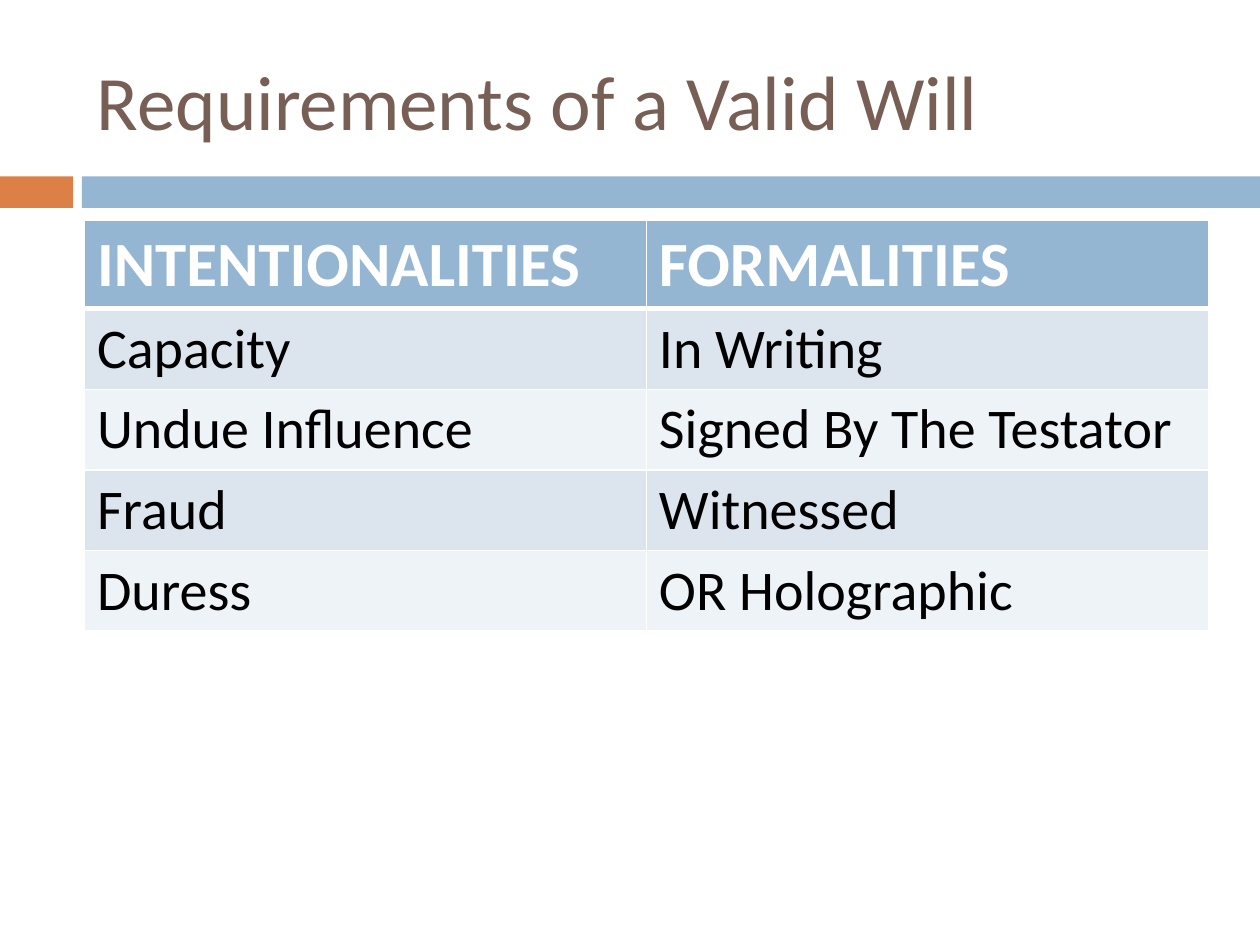
from dataclasses import dataclass

from lxml import etree
from pptx import Presentation
from pptx.dml.color import RGBColor
from pptx.enum.shapes import MSO_SHAPE
from pptx.enum.text import MSO_ANCHOR
from pptx.oxml.ns import qn
from pptx.util import Inches, Pt

RECTANGLE = MSO_SHAPE.RECTANGLE
MIDDLE = MSO_ANCHOR.MIDDLE
FONT = "Calibri"
COLORS = {
    "title": "775F55",
    "accent": "DD8047",
    "header": "94B6D2",
    "odd_row": "DCE5EE",
    "even_row": "EEF3F7",
    "white": "FFFFFF",
    "black": "000000",
}
REQUIREMENTS = [
    ("INTENTIONALITIES", "FORMALITIES"),
    ("Capacity", "In Writing"),
    ("Undue Influence", "Signed By The Testator"),
    ("Fraud", "Witnessed"),
    ("Duress", "OR Holographic"),
]


@dataclass
class Bar:
    left: float
    width: float
    color: str


@dataclass
class RowStyle:
    fill: str
    text: str
    size: int
    bold: bool
    top: int
    bottom: int


HEADER = RowStyle("header", "white", 36, True, 1, 3)
FIRST = RowStyle("odd_row", "black", 32, False, 3, 1)
ODD = RowStyle("odd_row", "black", 32, False, 1, 1)
EVEN = RowStyle("even_row", "black", 32, False, 1, 1)
ROW_STYLES = [HEADER, FIRST, EVEN, ODD, EVEN]
BARS = [Bar(0, 0.58, "accent"), Bar(0.65, 9.35, "header")]


def rgb(name: str) -> RGBColor:
    return RGBColor.from_string(COLORS[name])


def format_text(frame, size: int, color: str, bold: bool = False) -> None:
    for span in frame.paragraphs[0].runs:
        span.font.name = FONT
        span.font.size = Pt(size)
        span.font.bold = bold
        span.font.color.rgb = rgb(color)


def add_bar(page, bar: Bar) -> None:
    box = page.shapes.add_shape(
        RECTANGLE, Inches(bar.left), Inches(1.4), Inches(bar.width), Inches(0.25)
    )
    box.shadow.inherit = False
    box.fill.solid()
    box.fill.fore_color.rgb = rgb(bar.color)
    box.line.fill.background()


def add_title(page, text: str) -> None:
    box = page.shapes.add_textbox(Inches(0.67), Inches(0.25), Inches(8.92), Inches(1.08))
    frame = box.text_frame
    frame.word_wrap = True
    frame.vertical_anchor = MIDDLE
    frame.text = text
    format_text(frame, 44, "title")


def set_borders(cell, style: RowStyle) -> None:
    properties = cell._tc.get_or_add_tcPr()
    widths = {"a:lnL": 1, "a:lnR": 1, "a:lnT": style.top, "a:lnB": style.bottom}
    for tag, width in widths.items():
        line = etree.SubElement(properties, qn(tag), w=str(Pt(width)))
        fill = etree.SubElement(line, qn("a:solidFill"))
        etree.SubElement(fill, qn("a:srgbClr"), val=COLORS["white"])


def fill_cell(cell, text: str, style: RowStyle) -> None:
    set_borders(cell, style)
    cell.fill.solid()
    cell.fill.fore_color.rgb = rgb(style.fill)
    cell.text_frame.text = text
    format_text(cell.text_frame, style.size, style.text, style.bold)


def add_requirements_table(page) -> None:
    table = page.shapes.add_table(
        len(REQUIREMENTS), 2, Inches(0.67), Inches(1.75), Inches(8.92), Inches(3.23)
    ).table
    for row, texts, style in zip(table.rows, REQUIREMENTS, ROW_STYLES):
        row.height = Inches(0.7 if style is HEADER else 0.64)
        for cell, text in zip(row.cells, texts):
            fill_cell(cell, text, style)


def main() -> None:
    deck = Presentation()
    deck.slide_width, deck.slide_height = Inches(10), Inches(7.5)
    page = deck.slides.add_slide(deck.slide_layouts[6])

    # Divider bars under the title
    for bar in BARS:
        add_bar(page, bar)

    # Title and table
    add_title(page, "Requirements of a Valid Will")
    add_requirements_table(page)

    deck.save("out.pptx")


if __name__ == "__main__":
    main()
